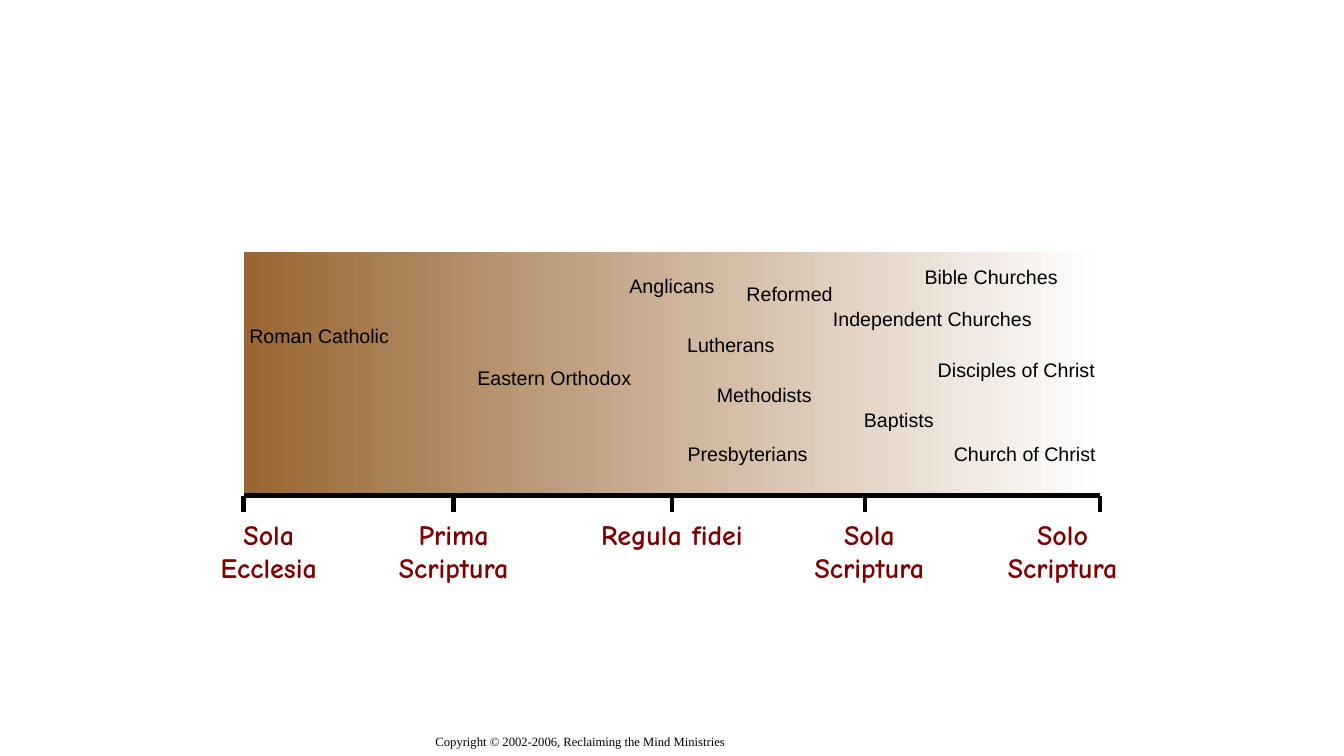
from dataclasses import dataclass

from lxml import etree
from pptx import Presentation
from pptx.dml.color import RGBColor
from pptx.enum.shapes import MSO_CONNECTOR, MSO_SHAPE
from pptx.enum.text import PP_ALIGN
from pptx.oxml.ns import qn
from pptx.slide import Slide
from pptx.util import Pt

STRAIGHT = MSO_CONNECTOR.STRAIGHT
RECTANGLE = MSO_SHAPE.RECTANGLE
LEFT, CENTER = PP_ALIGN.LEFT, PP_ALIGN.CENTER

BLACK = RGBColor(0x00, 0x00, 0x00)
WHITE = RGBColor(0xFF, 0xFF, 0xFF)
BROWN = RGBColor(0x99, 0x66, 0x33)
MAROON = RGBColor(0x80, 0x00, 0x00)

BAND_LEFT, BAND_TOP, BAND_WIDTH, BAND_HEIGHT = 174, 180, 612, 174
AXIS_Y = BAND_TOP + BAND_HEIGHT
TICK_LENGTH = 12


@dataclass(frozen=True)
class Position:
    """A named view on the axis, with its tick and its label box."""
    name: str
    tick: float
    left: float
    width: float
    height: float = 55


@dataclass(frozen=True)
class Tradition:
    name: str
    left: float
    top: float
    width: float = 168


POSITIONS = [
    Position("Sola Ecclesia", 174, 144, 96),
    Position("Prima Scriptura", 324, 258, 132),
    Position("Regula fidei", 480, 420, 120, 31),
    Position("Sola Scriptura", 618, 570, 102),
    Position("Solo Scriptura", 786, 708, 102),
]

TRADITIONS = [
    Tradition("Roman Catholic", 162, 228, 132),
    Tradition("Eastern Orthodox", 312, 258),
    Tradition("Anglicans", 396, 192),
    Tradition("Lutherans", 438, 234),
    Tradition("Presbyterians", 450, 312),
    Tradition("Methodists", 462, 270),
    Tradition("Reformed", 480, 198),
    Tradition("Baptists", 558, 288),
    Tradition("Independent Churches", 582, 216),
    Tradition("Bible Churches", 624, 186),
    Tradition("Disciples of Christ", 642, 252),
    Tradition("Church of Christ", 648, 312),
]


def add_text(slide: Slide, text: str, left: float, top: float, width: float,
             height: float, *, size: float = 14, font: str = "Arial",
             color: RGBColor = BLACK, bold: bool = False,
             align: PP_ALIGN = CENTER) -> None:
    frame = slide.shapes.add_textbox(
        Pt(left), Pt(top), Pt(width), Pt(height)).text_frame
    frame.word_wrap = True
    paragraph = frame.paragraphs[0]
    paragraph.alignment = align
    run = paragraph.add_run()
    run.text = text
    run.font.name = font
    run.font.size = Pt(size)
    run.font.bold = bold
    run.font.color.rgb = color


def add_line(slide: Slide, x1: float, y1: float, x2: float, y2: float) -> None:
    line = slide.shapes.add_connector(STRAIGHT, Pt(x1), Pt(y1), Pt(x2), Pt(y2))
    line.line.color.rgb = BLACK
    line.line.width = Pt(3)
    etree.SubElement(line._element.spPr, qn("a:effectLst"))


def add_band(slide: Slide) -> None:
    band = slide.shapes.add_shape(RECTANGLE, Pt(BAND_LEFT), Pt(BAND_TOP),
                                  Pt(BAND_WIDTH), Pt(BAND_HEIGHT))
    band.shadow.inherit = False
    band.line.fill.background()
    band.fill.gradient()
    band.fill.gradient_angle = 0
    for stop, offset, color in zip(band.fill.gradient_stops, (0, 1), (BROWN, WHITE)):
        stop.position = offset
        stop.color.rgb = color


def main() -> None:
    deck = Presentation()
    deck.slide_width, deck.slide_height = Pt(960), Pt(540)
    slide = deck.slides.add_slide(deck.slide_layouts.get_by_name("Blank"))

    add_band(slide)
    add_line(slide, BAND_LEFT, AXIS_Y, BAND_LEFT + BAND_WIDTH, AXIS_Y)
    for position in POSITIONS:
        add_line(slide, position.tick, AXIS_Y, position.tick, AXIS_Y + TICK_LENGTH)
        add_text(slide, position.name, position.left, AXIS_Y + TICK_LENGTH,
                 position.width, position.height, size=20, font="Comic Neue",
                 color=MAROON, bold=True)
    for tradition in TRADITIONS:
        add_text(slide, tradition.name, tradition.left, tradition.top,
                 tradition.width, 24)
    add_text(slide, "Copyright © 2002-2006, Reclaiming the Mind Ministries",
             304, 520.5, 336, 19, size=9, font="Times New Roman", align=LEFT)

    deck.save("out.pptx")


if __name__ == "__main__":
    main()
